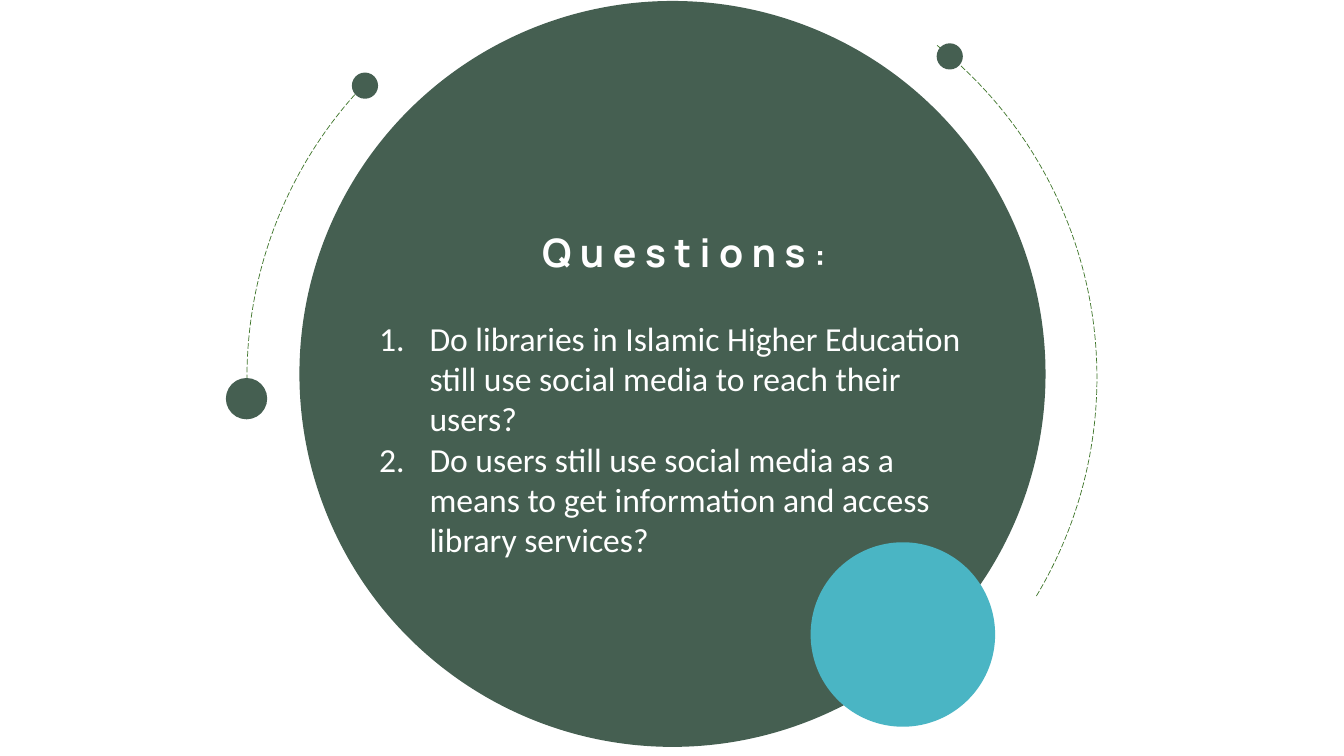
from lxml import etree
from pptx import Presentation
from pptx.dml.color import RGBColor
from pptx.enum.dml import MSO_LINE
from pptx.enum.shapes import MSO_SHAPE as Shape
from pptx.enum.text import MSO_ANCHOR as Anchor, MSO_AUTO_SIZE as AutoSize, PP_ALIGN as Align
from pptx.oxml.ns import qn
from pptx.util import Inches, Pt

GREEN, LEAF, TEAL, WHITE = "455F51", "3F762B", "4AB5C4", "FFFFFF"
TITLE_FONT = {"name": "Manrope", "bold": True}
BODY_FONT = {"name": "Calibri", "bold": False, "size": Pt(24)}
QUESTIONS = [
    "Do libraries in Islamic Higher Education still use social media to reach their users?",
    "Do users still use social media as a means to get information and access library services?",
]


def color(value):
    return RGBColor.from_string(value)


def add_round(page, kind, left, top, size):
    shape = page.shapes.add_shape(kind, *(Inches(n) for n in (left, top, size, size)))
    shape.shadow.inherit = False
    return shape


def add_disc(page, left, top, size, fill):
    disc = add_round(page, Shape.OVAL, left, top, size)
    disc.fill.solid()
    disc.fill.fore_color.rgb = color(fill)
    disc.line.fill.background()


def add_orbit(page, box, start, end, dots):
    """Dashed arc between two angles in degrees, with dots offset from the box."""
    left, top, size = box
    arc = add_round(page, Shape.ARC, left, top, size)
    for index, degrees in enumerate((start, end)):
        arc.adjustments[index] = degrees * 0.6  # 60000 units per degree
    arc.fill.background()
    arc.line.color.rgb = color(LEAF)
    arc.line.width = Pt(0.5)
    arc.line.dash_style = MSO_LINE.LONG_DASH
    for dx, dy, dot_size in dots:
        add_disc(page, left + dx, top + dy, dot_size, GREEN)


def format_span(span, values):
    for name, value in values.items():
        setattr(span.font, name, value)
    span.font.color.rgb = color(WHITE)


def place_text(holder, left, top, width, height):
    box = {"left": left, "top": top, "width": width, "height": height}
    for name, value in box.items():
        setattr(holder, name, Inches(value))
    frame = holder.text_frame
    frame.word_wrap = True
    frame.auto_size = AutoSize.NONE
    frame.vertical_anchor = Anchor.TOP
    # Bring the text in front of the discs
    holder.element.getparent().append(holder.element)
    return frame


def number_para(para):
    props = para._p.get_or_add_pPr()
    props.set("marL", str(Inches(0.5)))
    props.set("indent", str(Inches(-0.5)))
    etree.SubElement(props, qn("a:buFont"), typeface="Calibri")
    etree.SubElement(props, qn("a:buAutoNum"), type="arabicPeriod")


def add_questions(page, left, top, width, height):
    title_height = 0.89
    # Heading
    para = place_text(page.shapes.title, left, top, width, title_height).paragraphs[0]
    para.alignment = Align.CENTER
    for text, size in (("Questions", 28), (":", 24)):
        span = para.add_run()
        span.text = text
        format_span(span, {**TITLE_FONT, "size": Pt(size)})
        span.font._element.set("spc", "600")
    # Numbered list
    frame = place_text(page.placeholders[1], left, top + title_height,
                       width, height - title_height)
    frame.text = "\n".join(QUESTIONS)
    for para in frame.paragraphs:
        para.alignment = Align.LEFT
        para.space_before = Pt(0)
        number_para(para)
        format_span(para.runs[0], BODY_FONT)


def main():
    deck = Presentation()
    deck.slide_width, deck.slide_height = Inches(13.33), Inches(7.5)
    page = deck.slides.add_slide(deck.slide_layouts[1])
    # Main disc and its two orbits
    add_disc(page, 2.97, 0.01, 7.4, GREEN)
    orbit = (2.45, -0.47, 8.43)
    add_orbit(page, orbit, 178.56, 222.97, [(-0.21, 4.22, 0.41), (1.04, 1.19, 0.26)])
    add_orbit(page, orbit, 308.6, 30.95, [(6.84, 0.9, 0.26)])
    # Accent disc
    add_disc(page, 8.04, 5.38, 1.83, TEAL)
    add_questions(page, 3.66, 2.21, 6.25, 3.4)
    deck.save("out.pptx")


if __name__ == "__main__":
    main()
